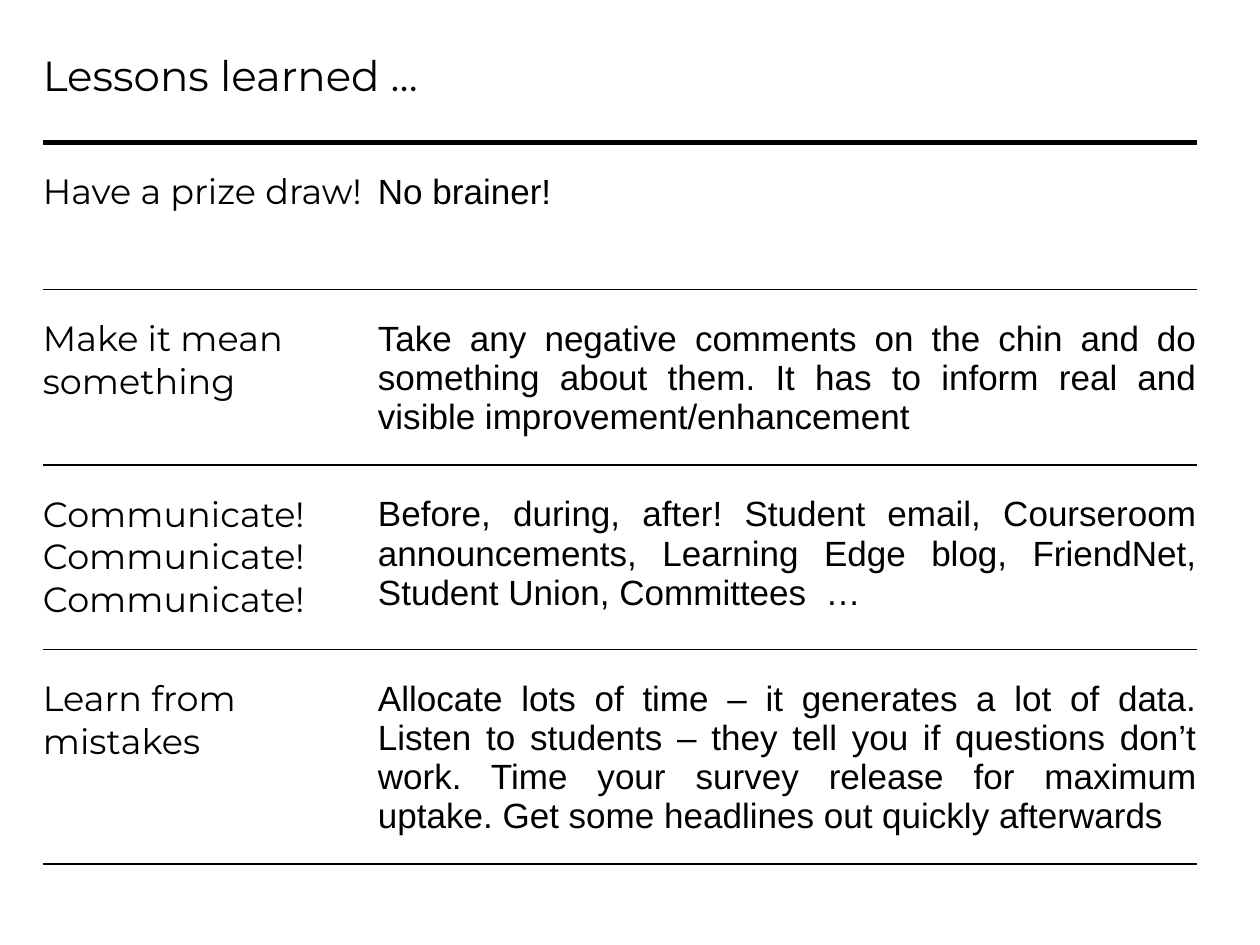
from dataclasses import dataclass

from lxml.etree import SubElement
from pptx import Presentation
from pptx.dml.color import RGBColor
from pptx.enum.text import PP_ALIGN
from pptx.oxml.ns import qn
from pptx.util import Pt


@dataclass(frozen=True)
class Theme:
    ink: str = "000000"
    label_font: str = "Montserrat"
    body_font: str = "Arial"
    title_size: float = 24
    text_size: float = 20
    thin: float = 0.75
    thick: float = 3


THEME = Theme()
TITLE = "Lessons learned …"
LESSONS = [
    ("Have a prize draw!", "No brainer!"),
    ("Make it mean something",
     "Take any negative comments on the chin and do something about them. "
     "It has to inform real and visible improvement/enhancement"),
    ("Communicate! Communicate! Communicate!",
     "Before, during, after! Student email, Courseroom announcements, "
     "Learning Edge blog, FriendNet, Student Union, Committees  …"),
    ("Learn from mistakes",
     "Allocate lots of time – it generates a lot of data. Listen to students – "
     "they tell you if questions don’t work. Time your survey release for "
     "maximum uptake. Get some headlines out quickly afterwards"),
]
COLUMN_WIDTHS = (191.5, 468)
ROW_HEIGHTS = (52.5, 84.2, 80.6, 104.4, 87.1)


def rule_cell(cell, top, bottom):
    """Rule the cell above and below (0 for no line), leaving its sides open."""
    tc_pr = cell._tc.get_or_add_tcPr()
    for tag, width in (("lnL", 0), ("lnR", 0), ("lnT", top), ("lnB", bottom)):
        ln = SubElement(tc_pr, qn(f"a:{tag}"), w=str(Pt(width)))
        if width:
            fill = SubElement(ln, qn("a:solidFill"))
            SubElement(fill, qn("a:srgbClr"), val=THEME.ink)
        else:
            SubElement(ln, qn("a:noFill"))
    cell.fill.background()


def fill_cell(cell, text, font, size, top, bottom, align=PP_ALIGN.LEFT):
    """Write text in the cell with the given top and bottom margins."""
    cell.margin_left = cell.margin_right = 0
    cell.margin_top, cell.margin_bottom = Pt(top), Pt(bottom)
    p = cell.text_frame.paragraphs[0]
    p.alignment = align
    r = p.add_run()
    r.text = text
    r.font.name = font
    r.font.size = Pt(size)
    r.font.color.rgb = RGBColor.from_string(THEME.ink)


def add_lessons_table(s, left, top, width, height):
    table = s.shapes.add_table(len(LESSONS) + 1, 2, Pt(left), Pt(top),
                               Pt(width), Pt(height)).table
    table.first_row = table.horz_banding = False
    for column, w in zip(table.columns, COLUMN_WIDTHS):
        column.width = Pt(w)
    for row, h in zip(table.rows, ROW_HEIGHTS):
        row.height = Pt(h)

    title = table.cell(0, 0)
    title.merge(table.cell(0, 1))
    fill_cell(title, TITLE, THEME.label_font, THEME.title_size, 0, 18.7)
    for cell in table.rows[0].cells:
        rule_cell(cell, 0, THEME.thick)

    for i, (label, advice) in enumerate(LESSONS, start=1):
        label_cell, advice_cell = table.rows[i].cells
        fill_cell(label_cell, label, THEME.label_font, THEME.text_size, 16, 16)
        fill_cell(advice_cell, advice, THEME.body_font, THEME.text_size,
                  17.3, 16, PP_ALIGN.JUSTIFY)
        for cell in (label_cell, advice_cell):
            rule_cell(cell, THEME.thick if i == 1 else THEME.thin, THEME.thin)


def main():
    prs = Presentation()
    prs.slide_width, prs.slide_height = Pt(720), Pt(540)
    s = prs.slides.add_slide(prs.slide_layouts[6])
    add_lessons_table(s, 24.5, 28.8, sum(COLUMN_WIDTHS), sum(ROW_HEIGHTS))
    prs.save("out.pptx")


if __name__ == "__main__":
    main()
